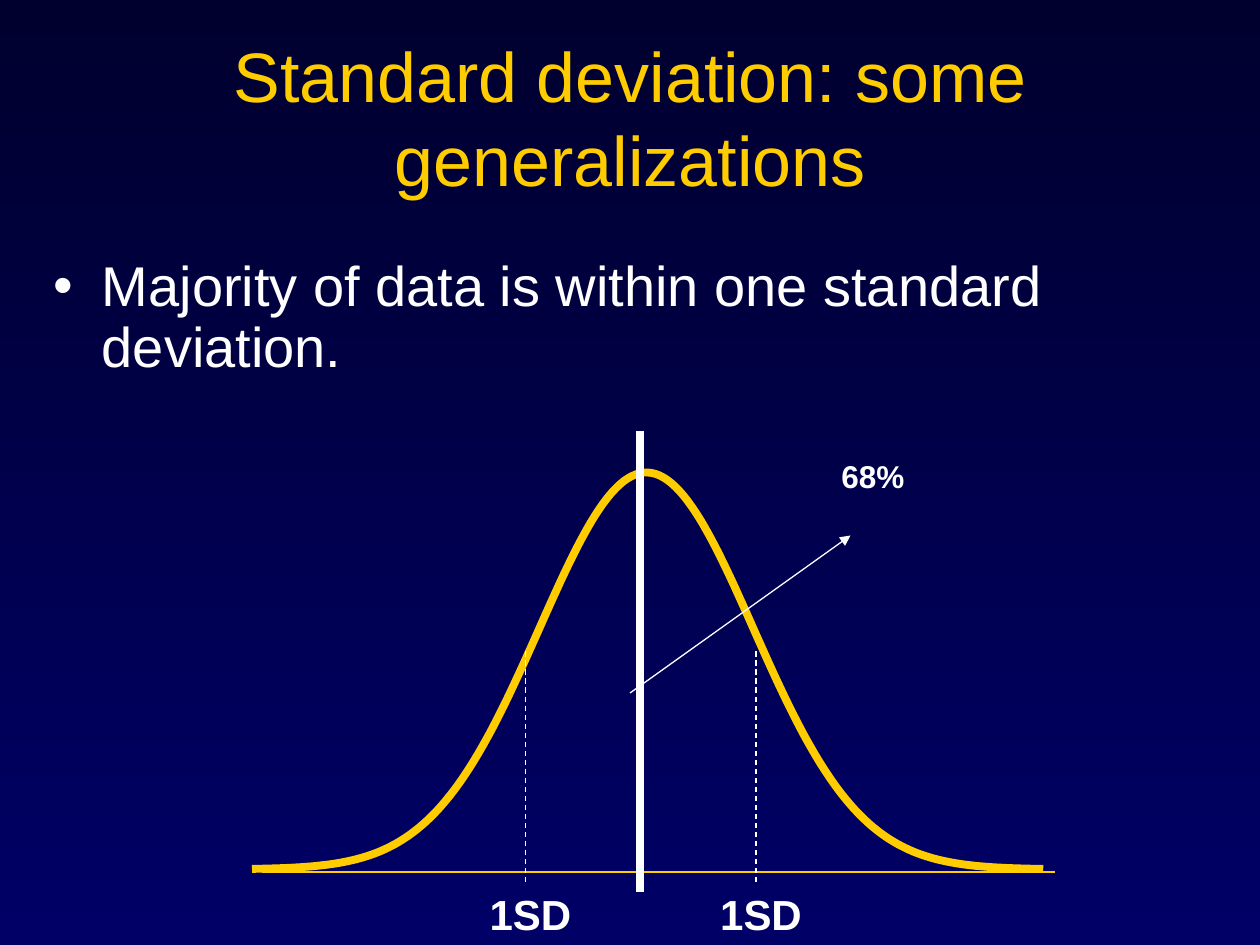
"""Build a slide on the normal curve and the share of data within one standard deviation."""
from math import exp

from lxml.etree import SubElement
from pptx import Presentation
from pptx.dml.color import RGBColor
from pptx.enum.dml import MSO_LINE
from pptx.enum.shapes import MSO_CONNECTOR
from pptx.enum.text import MSO_ANCHOR, MSO_AUTO_SIZE, PP_ALIGN
from pptx.oxml.ns import qn
from pptx.util import Inches, Pt

COLORS = {"top": "00002F", "bottom": "000066", "gold": "FFCC00", "white": "FFFFFF"}
MEAN, SIGMA, PEAK, BASE = 5.13, 0.85, 3.75, 6.9
CURVE_LEFT, CURVE_RIGHT, STEPS = 2, 8.28, 200


def write(box, place, text, size, color="white", bold=False, align=PP_ALIGN.LEFT):
    box.left, box.top, box.width, box.height = [Inches(value) for value in place]
    frame = box.text_frame
    frame.word_wrap = True
    frame.auto_size = MSO_AUTO_SIZE.NONE
    para = frame.paragraphs[0]
    para.text = text
    para.alignment = align
    para.font.name = "Arial"
    para.font.size = Pt(size)
    para.font.bold = bold
    para.font.color.rgb = RGBColor.from_string(COLORS[color])
    return para


def draw_line(start, end, width, color="white"):
    points = [Inches(value) for value in (*start, *end)]
    connector = page.shapes.add_connector(MSO_CONNECTOR.STRAIGHT, *points)
    connector.line.width = Pt(width)
    connector.line.color.rgb = RGBColor.from_string(COLORS[color])
    SubElement(connector._element.spPr, qn("a:effectLst"))
    return connector.line


deck = Presentation()
deck.slide_width, deck.slide_height = Inches(10), Inches(7.5)
page = deck.slides.add_slide(deck.slide_layouts[5])

backdrop = page.background.fill
backdrop.gradient()
backdrop.gradient_angle = 270
for stop, position, name in zip(backdrop.gradient_stops, (0, 1), ("top", "bottom")):
    stop.position = position
    stop.color.rgb = RGBColor.from_string(COLORS[name])

title = page.shapes.title
write(title, (0.5, 0.3, 9, 1.25), "Standard deviation: some generalizations", 40, "gold",
      align=PP_ALIGN.CENTER)
title.text_frame.vertical_anchor = MSO_ANCHOR.MIDDLE

body = page.shapes.add_textbox(0, 0, 0, 0)
statement = write(body, (0.33, 2, 9, 1.08),
                  "Majority of data is within one standard deviation.", 32)
statement.line_spacing = 0.9
properties = statement._p.get_or_add_pPr()
properties.set("marL", str(Inches(0.38)))
properties.set("indent", str(Inches(-0.38)))
SubElement(properties, qn("a:buFont")).set("typeface", "Arial")
SubElement(properties, qn("a:buChar")).set("char", "•")

draw_line((2.08, 6.92), (8.37, 6.92), 1.38, "gold")

points = []
for step in range(STEPS + 1):
    x = CURVE_LEFT + (CURVE_RIGHT - CURVE_LEFT) * step / STEPS
    y = BASE - (BASE - PEAK) * exp(-((x - MEAN) / SIGMA) ** 2 / 2)
    points.append((Inches(x), Inches(y)))
builder = page.shapes.build_freeform(*points[0])
builder.add_line_segments(points[1:], close=False)
curve = builder.convert_to_shape()
curve.shadow.inherit = False
curve.fill.background()
curve.line.width = Pt(4.5)
curve.line.color.rgb = RGBColor.from_string(COLORS["gold"])

draw_line((5.08, 3.42), (5.08, 7.08), 4.5)

for label_left, mark in ((3.67, 4.17), (5.5, 6)):
    label = page.shapes.add_textbox(0, 0, 0, 0)
    write(label, (label_left, 7, 1.08, 0.5), "1SD", 24, bold=True, align=PP_ALIGN.CENTER)
    draw_line((mark, 5.17), (mark, 7), 0.75).dash_style = MSO_LINE.DASH

arrow = draw_line((5, 5.5), (6.75, 4.25), 0.75)
SubElement(arrow._get_or_add_ln(), qn("a:tailEnd")).set("type", "triangle")

share = page.shapes.add_textbox(0, 0, 0, 0)
write(share, (6.58, 3.58, 1.75, 0.4), "68%", 18, bold=True)

deck.save("out.pptx")
